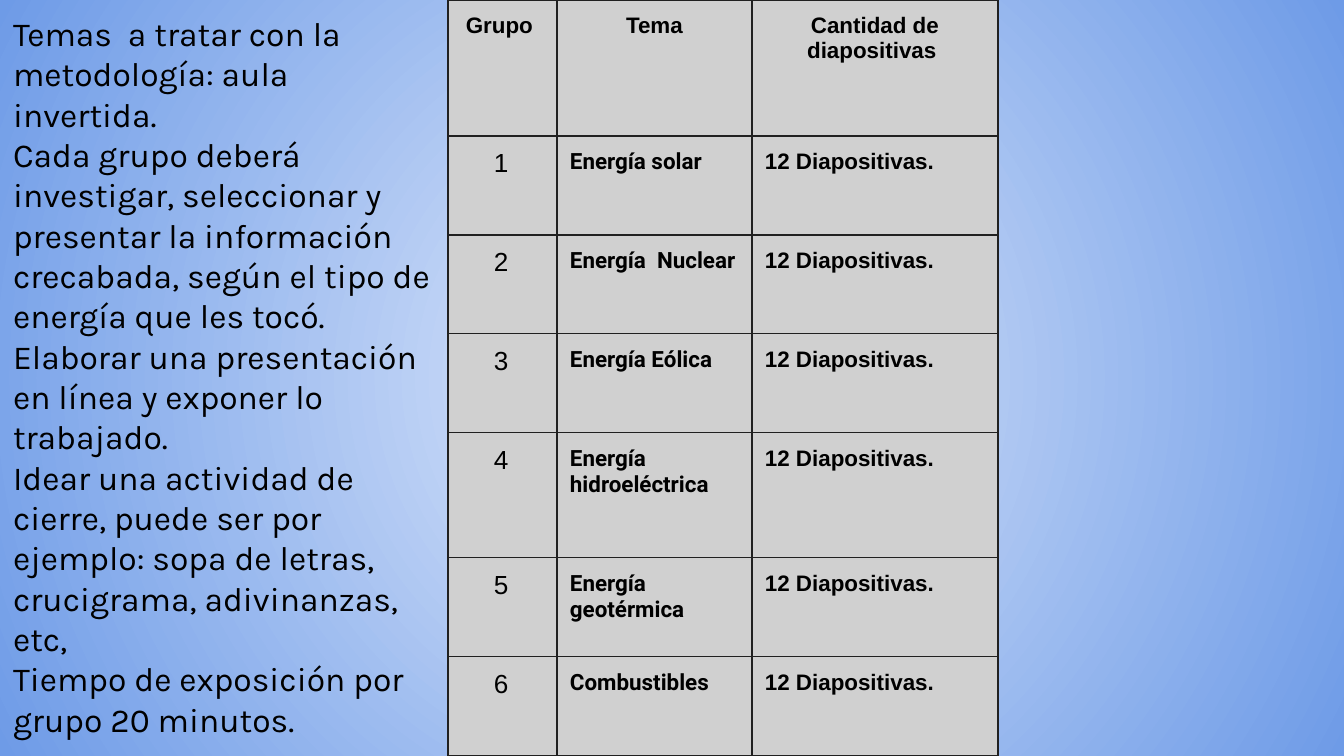
from typing import Any, NamedTuple

import lxml.etree
import pptx
import pptx.dml.color
import pptx.enum.text
import pptx.oxml
import pptx.oxml.ns
import pptx.util

SCALE = 914400 / 134.4
NS = pptx.oxml.ns.nsdecls("a", "p")
PAD = 13
INK, EDGE, GRAY = "000000", "202020", "D0D0D0"
CENTER = pptx.enum.text.PP_ALIGN.CENTER
LEFT = pptx.enum.text.PP_ALIGN.LEFT


class Topic(NamedTuple):
    name: str
    height: int = 99


NOTES = [
    "Temas  a tratar con la metodología: aula invertida.",
    "Cada grupo deberá investigar, seleccionar y presentar la información "
    "crecabada, según el tipo de energía que les tocó.",
    "Elaborar una presentación en línea y exponer lo trabajado.",
    "Idear una actividad de cierre, puede ser por ejemplo: sopa de letras, "
    "crucigrama, adivinanzas, etc,",
    "Tiempo de exposición por grupo 20 minutos.",
]
HEADS = ["Grupo ", "Tema", "Cantidad de diapositivas "]
WIDTHS = [109, 195, 246]
HEAD_HEIGHT = 136
TOPICS = [
    Topic("Energía solar"),
    Topic("Energía  Nuclear"),
    Topic("Energía Eólica"),
    Topic("Energía hidroeléctrica", 125),
    Topic("Energía geotérmica"),
    Topic("Combustibles"),
]


def px(n: int) -> int:
    return round(n * SCALE)


def rgb(code: str) -> pptx.dml.color.RGBColor:
    return pptx.dml.color.RGBColor.from_string(code)


def write(frame: Any, text: str, *, size: int = 12, font: str = "Arial",
          bold: bool = False, align: Any = LEFT, hang: bool = False) -> None:
    """Fill a text frame, one paragraph per line of text."""
    frame.word_wrap = True
    for i, line in enumerate(text.split("\n")):
        para = frame.add_paragraph() if i else frame.paragraphs[0]
        para.alignment = align
        if hang:
            props = para._p.get_or_add_pPr()
            props.set("marL", str(px(67)))
            props.set("indent", str(-px(34)))
        run = para.add_run()
        run.text = line
        run.font.size = pptx.util.Pt(size)
        run.font.name = font
        run.font.bold = bold
        run.font.color.rgb = rgb(INK)


def paint(slide: Any) -> None:
    """Give the slide a radial gradient background."""
    stops = "".join(
        f'<a:gs pos="{pos}"><a:srgbClr val="{code}"/></a:gs>'
        for pos, code in [(0, "DFE9FB"), (100000, "6E9BE7")])
    back = pptx.oxml.parse_xml(
        f'<p:bg {NS}><p:bgPr><a:gradFill rotWithShape="1"><a:gsLst>{stops}</a:gsLst>'
        '<a:path path="circle"><a:fillToRect l="50000" t="50000" r="50000" b="50000"/>'
        '</a:path></a:gradFill><a:effectLst/></p:bgPr></p:bg>')
    slide._element.cSld.insert(0, back)


def style(cell: Any) -> None:
    """Set the insets, fill and four borders of a cell."""
    cell.margin_left = cell.margin_right = px(PAD)
    cell.margin_top = cell.margin_bottom = px(PAD)
    cell.fill.solid()
    cell.fill.fore_color.rgb = rgb(GRAY)
    props = cell._tc.get_or_add_tcPr()
    for i, side in enumerate(("lnL", "lnR", "lnT", "lnB")):
        props.insert(i, pptx.oxml.parse_xml(
            f'<a:{side} {NS} w="{pptx.util.Pt(0.75)}"><a:solidFill>'
            f'<a:srgbClr val="{EDGE}"/></a:solidFill></a:{side}>'))


def add_notes(slide: Any) -> None:
    frame = slide.shapes.add_textbox(0, 0, px(448), px(237)).text_frame
    frame.margin_left = frame.margin_right = px(PAD)
    frame.margin_top = frame.margin_bottom = px(PAD)
    write(frame, "\n".join(NOTES), size=18, font="Karla")


def add_grid(slide: Any) -> None:
    heights = [HEAD_HEIGHT] + [topic.height for topic in TOPICS]
    grid = slide.shapes.add_table(
        len(heights), len(WIDTHS), px(448), 0,
        px(sum(WIDTHS)), px(sum(heights))).table
    for col, width in zip(grid.columns, WIDTHS):
        col.width = px(width)
    for row, height in zip(grid.rows, heights):
        row.height = px(height)
    for cell in grid.iter_cells():
        style(cell)
    for i, head in enumerate(HEADS):
        write(grid.cell(0, i).text_frame, head, bold=True, align=CENTER)
    for i, topic in enumerate(TOPICS, 1):
        write(grid.cell(i, 0).text_frame, str(i), size=14, hang=True)
        write(grid.cell(i, 1).text_frame, topic.name, font="Roboto", bold=True)
        write(grid.cell(i, 2).text_frame, "12 Diapositivas.", bold=True)


def main() -> None:
    deck = pptx.Presentation()
    deck.slide_width, deck.slide_height = px(1344), px(756)
    slide = deck.slides.add_slide(deck.slide_layouts[6])
    paint(slide)
    add_notes(slide)
    add_grid(slide)
    deck.save("out.pptx")


if __name__ == "__main__":
    main()
